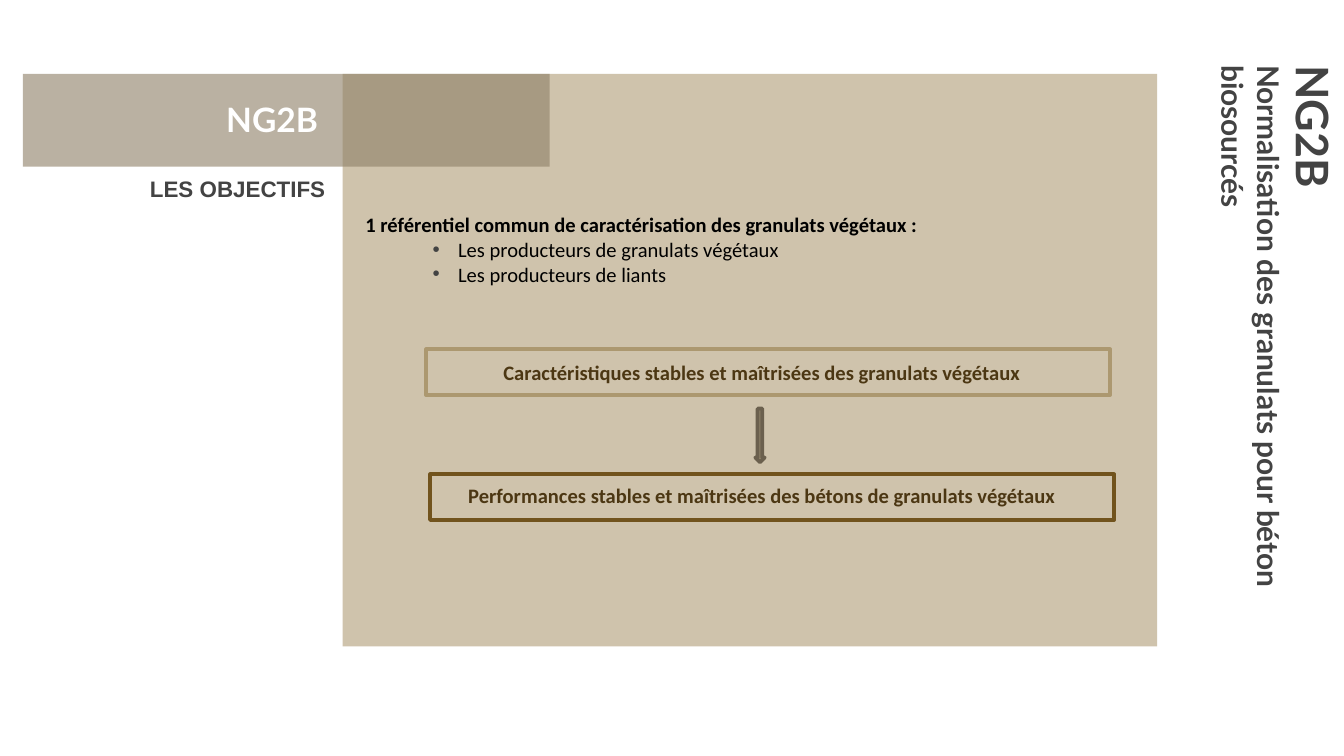
from pptx import Presentation
from pptx import util as u
from pptx.dml.color import RGBColor
from pptx.enum import shapes, text
from pptx.oxml.ns import qn
from lxml import etree

SAND = RGBColor(0xCF, 0xC3, 0xAC)
TAUPE = RGBColor(0x90, 0x82, 0x69)
TAUPE_DARK = RGBColor(0x6B, 0x60, 0x4E)
KHAKI = RGBColor(0xAC, 0x98, 0x70)
BROWN = RGBColor(0x71, 0x53, 0x1D)
BROWN_DARK = RGBColor(0x4C, 0x37, 0x13)
GREY = RGBColor(0x43, 0x43, 0x43)
WHITE = RGBColor(0xFF, 0xFF, 0xFF)
BLACK = RGBColor(0, 0, 0)

RECT = shapes.MSO_SHAPE.RECTANGLE
ARROW = shapes.MSO_SHAPE.DOWN_ARROW
ALIGN = text.PP_ALIGN
ANCHOR = text.MSO_ANCHOR


class SlideBuilder:
    def __init__(self, page, inset=0.1):
        self.page = page
        self.inset = inset

    def shape(self, kind, place, fill=None, alpha=None, line=None):
        box = self.page.shapes.add_shape(kind, *map(u.Inches, place))
        box.shadow.inherit = False
        if fill is None:
            box.fill.background()
        else:
            box.fill.solid()
            box.fill.fore_color.rgb = fill
        if alpha is not None:
            color = box.fill._xPr.find(".//" + qn("a:srgbClr"))
            etree.SubElement(color, qn("a:alpha")).set("val", str(alpha * 1000))
        if line is None:
            box.line.fill.background()
        else:
            box.line.color.rgb = line
            box.line.width = u.Pt(2)
            etree.SubElement(box.line._ln, qn("a:round"))
        return box

    def text_box(self, place, anchor=ANCHOR.TOP, inset=None, rotation=0):
        box = self.page.shapes.add_textbox(*map(u.Inches, place))
        box.rotation = rotation
        frame = box.text_frame
        margin = u.Inches(self.inset if inset is None else inset)
        values = {"word_wrap": True, "vertical_anchor": anchor}
        for side in ("left", "right", "top", "bottom"):
            values["margin_" + side] = margin
        for name, value in values.items():
            setattr(frame, name, value)
        return frame

    def paragraph(self, frame, words, size, font, color, bold=True,
                  align=ALIGN.LEFT, before=0, left=0, hanging=0, bullet=None):
        first = frame.paragraphs[0]
        para = first if not first.runs else frame.add_paragraph()
        para.alignment = align
        para.space_before = u.Pt(before)
        props = para._p.get_or_add_pPr()
        props.set("marL", str(u.Inches(left)))
        props.set("indent", str(u.Inches(-hanging)))
        if bullet:
            tint = etree.SubElement(props, qn("a:buClr"))
            etree.SubElement(tint, qn("a:srgbClr")).set("val", str(GREY))
            etree.SubElement(props, qn("a:buFont")).set("typeface", "Arial")
            etree.SubElement(props, qn("a:buChar")).set("char", bullet)
        span = para.add_run()
        span.text = words
        span.font.color.rgb = color
        for name, value in {"size": u.Pt(size), "name": font, "bold": bold}.items():
            setattr(span.font, name, value)


def main():
    deck = Presentation()
    deck.slide_width = u.Inches(10)
    deck.slide_height = deck.slide_width * 9 // 16
    build = SlideBuilder(deck.slides.add_slide(deck.slide_layouts[6]))

    build.shape(RECT, (2.55, 0.55, 6.06, 4.26), SAND)

    side_title = build.text_box((7.11, 2.42, 4.8, 0.93), inset=0, rotation=90)
    build.paragraph(side_title, "NG2B", 24, "Lato", GREY)
    build.paragraph(side_title, "Normalisation des granulats pour béton biosourcés",
                    16, "Lato", GREY)

    build.shape(RECT, (0.17, 0.55, 3.92, 0.69), TAUPE, alpha=62)
    title = build.text_box((0.26, 0.64, 3.53, 0.49), ANCHOR.MIDDLE)
    build.paragraph(title, "NG2B", 18, "Lato", WHITE, align=ALIGN.CENTER)

    body = build.text_box((2.43, 1.48, 6.29, 2.6))
    plain = {"left": 0.38, "hanging": 0.19, "align": ALIGN.JUSTIFY}
    item = {**plain, "left": 0.88, "bullet": "•", "bold": False}
    result = {**plain, "align": ALIGN.CENTER}
    for words, color, style in (
        ("1 référentiel commun de caractérisation des granulats végétaux :", BLACK, plain),
        ("Les producteurs de granulats végétaux", BLACK, item),
        ("Les producteurs de liants", BLACK, item),
        ("Caractéristiques stables et maîtrisées des granulats végétaux",
         BROWN_DARK, {**result, "before": 39.5}),
        ("Performances stables et maîtrisées des bétons de granulats végétaux",
         BROWN_DARK, {**result, "before": 52.5}),
    ):
        build.paragraph(body, words, 11, "Calibri", color, **style)

    subtitle = build.text_box((0.19, 1.2, 2.33, 0.9))
    build.paragraph(subtitle, "LES OBJECTIFS", 12, "Arial", GREY, align=ALIGN.RIGHT)

    build.shape(ARROW, (5.62, 3.04, 0.07, 0.4), TAUPE, line=TAUPE_DARK)
    for left, top, color in ((3.17, 2.6, KHAKI), (3.2, 3.53, BROWN)):
        build.shape(RECT, (left, top, 5.09, 0.34), line=color)

    deck.save("out.pptx")


if __name__ == "__main__":
    main()
